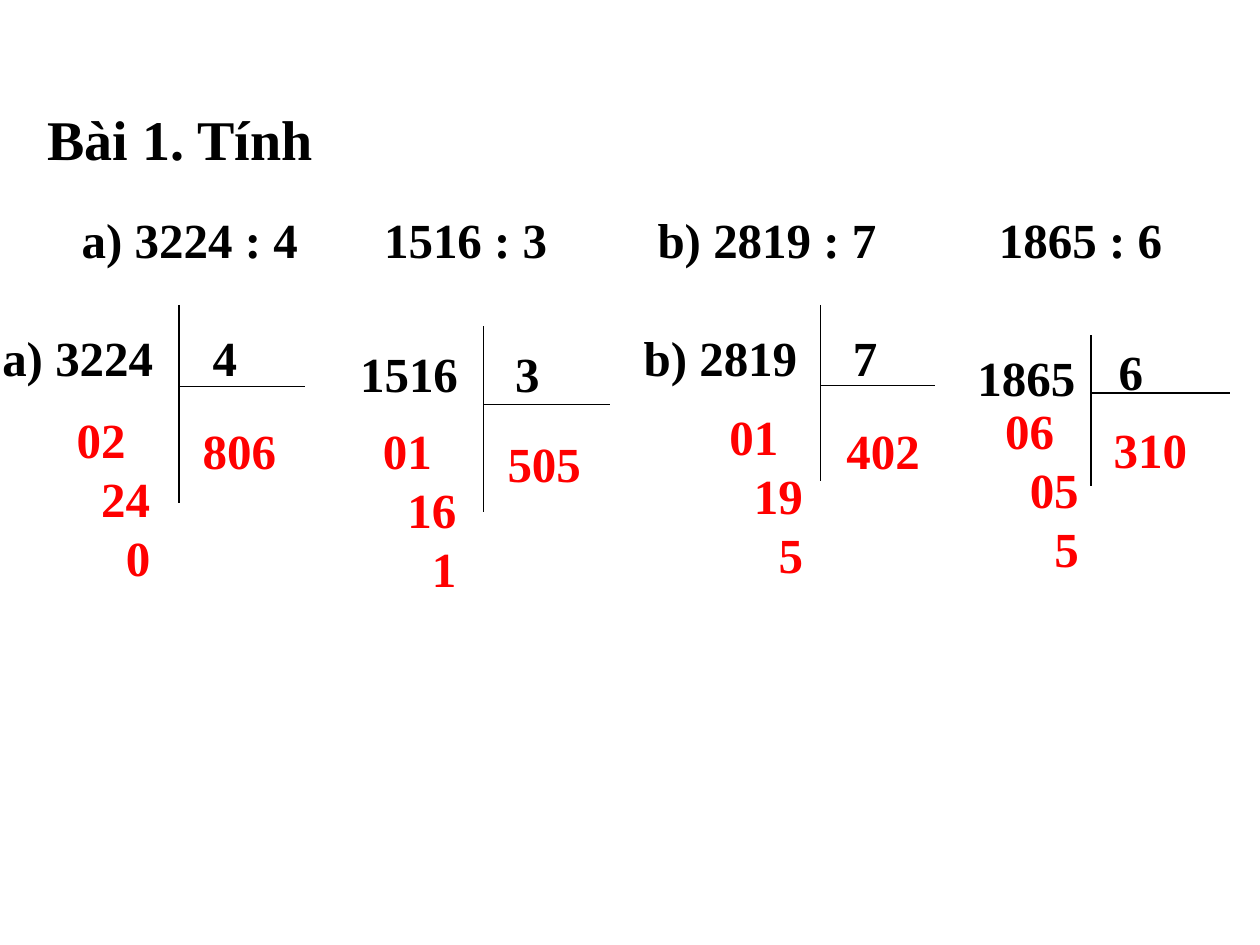
from dataclasses import dataclass

from lxml.etree import SubElement
from pptx import Presentation
from pptx.dml.color import RGBColor
from pptx.enum.shapes import MSO_CONNECTOR as Connector
from pptx.enum.text import MSO_AUTO_SIZE as AutoSize
from pptx.oxml.ns import qn
from pptx.util import Inches, Pt

BLACK = RGBColor(0x00, 0x00, 0x00)
RED = RGBColor(0xFF, 0x00, 0x00)
FONT = "Times New Roman"
SLIDE_WIDTH, SLIDE_HEIGHT = Inches(10), Inches(7.5)
COLUMN, ROW = SLIDE_WIDTH / 100, SLIDE_HEIGHT / 75
DIGIT_STEP = 1.95


@dataclass
class Division:
    dividend: str
    divisor: str
    remainders: tuple
    quotient: str
    box: tuple
    corner: tuple
    dividend_box: tuple
    divisor_box: tuple
    remainders_box: tuple
    quotient_box: tuple
    first_indent: float = 1


DIVISIONS = [
    Division("a) 3224", "4", ("02", "24", "0"), "806",
             box=(-0.8, 24.2, 25, 15.7), corner=(15, 6.5),
             dividend_box=(0, 1.3, 16.7, 8.9), divisor_box=(16.7, 1.3, 3.3, 5.7),
             remainders_box=(3.9, 7.8, 15, 23.5), quotient_box=(15.9, 8.7, 8.3, 8.9),
             first_indent=2),
    Division("1516", "3", ("01", "16", "1"), "505",
             box=(27.6, 25.9, 20.8, 14.7), corner=(10.8, 6.2),
             dividend_box=(0, 0.9, 10, 8.3), divisor_box=(12.3, 0.9, 4.2, 8.3),
             remainders_box=(0.8, 7, 13.3, 22.1), quotient_box=(11.7, 8, 8.3, 8.3)),
    Division("b) 2819", "7", ("01", "19", "5"), "402",
             box=(50.1, 24.2, 24.1, 14), corner=(15, 6.4),
             dividend_box=(0, 1.3, 15, 8.7), divisor_box=(16.6, 1.3, 5, 8.7),
             remainders_box=(5.8, 7.6, 10.2, 22.9), quotient_box=(16.1, 8.7, 8.3, 8.7)),
    Division("1865", "6", ("06", "05", "5"), "310",
             box=(76.6, 26.6, 21, 12), corner=(10, 4.6),
             dividend_box=(0, 0.5, 10, 6.3), divisor_box=(11.2, 0, 4.2, 6.3),
             remainders_box=(1.2, 4.7, 10, 16.8), quotient_box=(10.8, 6.2, 9.2, 6.3)),
]


def across(columns):
    return round(columns * COLUMN)


def down(rows):
    return round(rows * ROW)


def add_text(shapes, box, *lines, size=28, color=BLACK, indents=(), tabs=()):
    left, top, width, height = box
    textbox = shapes.add_textbox(across(left), down(top), across(width), down(height))
    frame = textbox.text_frame
    frame.word_wrap = True
    frame.auto_size = AutoSize.SHAPE_TO_FIT_TEXT
    frame.text = "\n".join(lines)
    for index, paragraph in enumerate(frame.paragraphs):
        properties = paragraph._p.get_or_add_pPr()
        if indents:
            properties.set("marL", str(across(indents[index])))
            properties.set("indent", "0")
        if tabs:
            stops = SubElement(properties, qn("a:tabLst"))
            for stop in tabs:
                SubElement(stops, qn("a:tab"), pos=str(across(stop)), algn="l")
        for run in paragraph.runs:
            run.font.name = FONT
            run.font.size = Pt(size)
            run.font.bold = True
            run.font.color.rgb = color


def add_rule(shapes, x1, y1, x2, y2):
    rule = shapes.add_connector(
        Connector.STRAIGHT, across(x1), down(y1), across(x2), down(y2))
    rule.line.color.rgb = BLACK
    rule.line.width = Pt(0.75)
    SubElement(rule._element.spPr, qn("a:effectLst"))


def add_exercise(shapes, box):
    left, top, width, height = box
    add_text(shapes, (left, top, 25, 6.4), "Bài 1. Tính", size=32)
    add_text(shapes, (left + 2.7, top + 8.3, width - 2.7, height - 8.3),
             "a) 3224 : 4\t1516 : 3\tb) 2819 : 7\t1865 : 6",
             tabs=(24, 45.7, 72.8))


def add_division(shapes, division):
    left, top, width, height = division.box
    corner_x, corner_y = left + division.corner[0], top + division.corner[1]
    parts = shapes.add_group_shape().shapes

    def inside(part_box):
        x, y, part_width, part_height = part_box
        return left + x, top + y, part_width, part_height

    indents = [division.first_indent + DIGIT_STEP * index
               for index in range(len(division.remainders))]
    add_text(parts, inside(division.dividend_box), division.dividend)
    add_text(parts, inside(division.divisor_box), division.divisor)
    add_text(parts, inside(division.remainders_box), *division.remainders,
             color=RED, indents=indents)
    add_text(parts, inside(division.quotient_box), division.quotient, color=RED)
    add_rule(parts, corner_x, corner_y, left + width, corner_y)
    add_rule(parts, corner_x, top, corner_x, top + height)


def main():
    presentation = Presentation()
    presentation.slide_width = SLIDE_WIDTH
    presentation.slide_height = SLIDE_HEIGHT
    slide = presentation.slides.add_slide(presentation.slide_layouts[6])
    add_exercise(slide.shapes, (2.8, 7.8, 91.9, 14))
    for division in DIVISIONS:
        add_division(slide.shapes, division)
    presentation.save("out.pptx")


if __name__ == "__main__":
    main()
